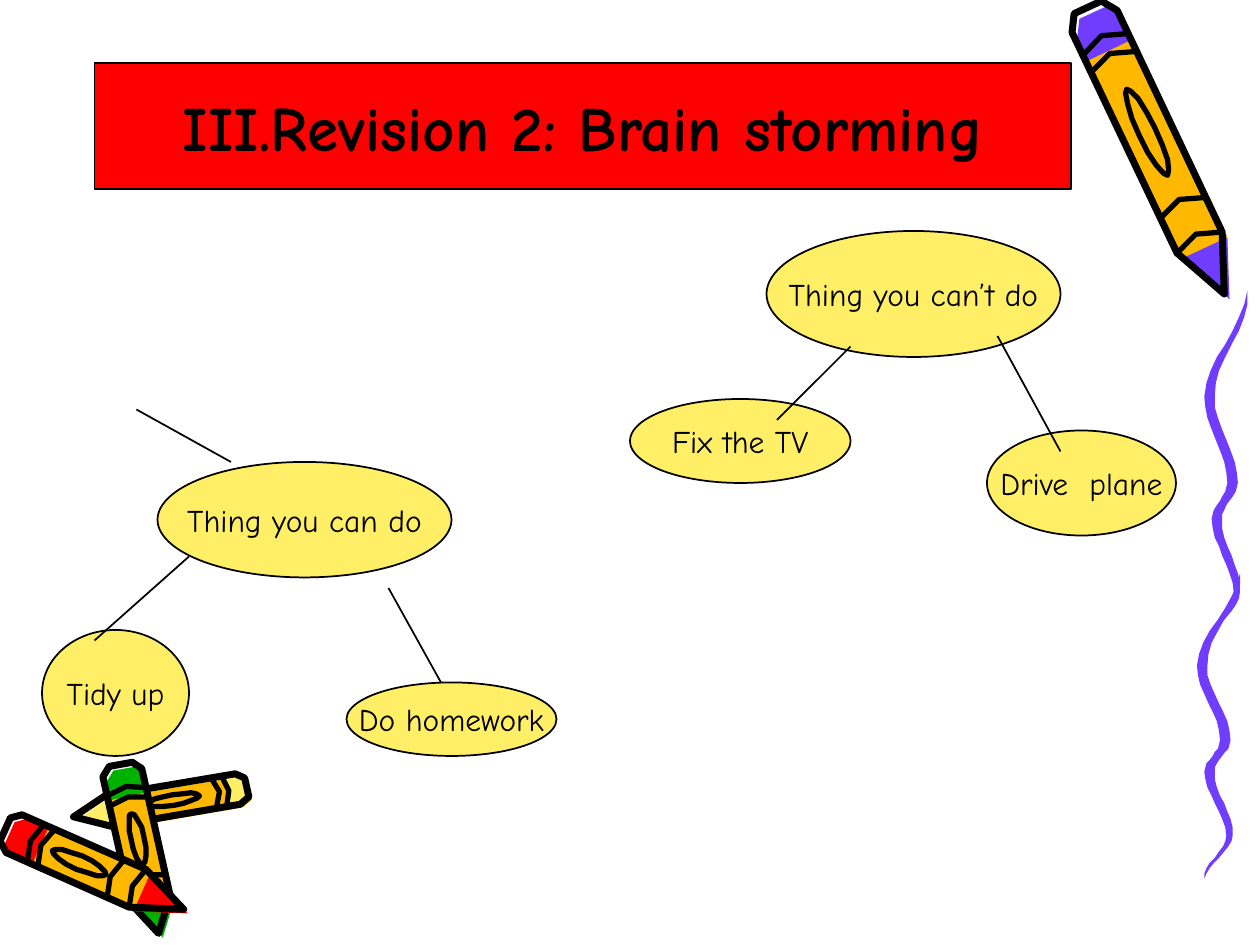
from dataclasses import dataclass
from itertools import pairwise
from math import cos, hypot, pi, sin

from lxml import etree
from pptx import Presentation
from pptx import util as u
from pptx.dml.color import RGBColor
from pptx.enum import shapes, text
from pptx.oxml.ns import qn

PX = 7620  # EMU per px, 120 px to the inch
FONT = "Comic Neue"
COLORS = {
    "black": "000000", "white": "F8F8F8", "red": "FF0000", "green": "00B200",
    "purple": "703DFF", "orange": "FFB800", "yellow": "FFEF66",
}

# Each mind map: a hub bubble, its leaf bubbles (left, top, width, height) and links (from, to)
MIND_MAPS = [
    {
        "hub": ("Thing you can do", 150, 440, 280, 110),
        "leaves": [("Tidy up", 40, 600, 140, 120), ("Do homework", 330, 650, 200, 70)],
        "links": [(220, 440, 130, 390), (180, 530, 90, 610), (370, 560, 420, 650)],
    },
    {
        "hub": ("Thing you can’t do", 730, 220, 280, 120),
        "leaves": [("Fix the TV", 600, 380, 210, 80), ("Drive  plane", 940, 410, 180, 100)],
        "links": [(810, 330, 740, 400), (950, 320, 1010, 430)],
    },
]


@dataclass
class Crayon:
    """A crayon from its blunt end to its tip; parts are placed as shares of length and width."""
    color: str
    end: tuple
    tip: tuple
    width: int
    shoulder: float  # where the cone starts
    cap: float = 0.13  # where the coloured blunt end stops

    def place(self, points, shift=0):
        """Turn (along, across) shares into px, moved right and down by shift."""
        dx, dy = self.tip[0] - self.end[0], self.tip[1] - self.end[1]
        side = self.width / hypot(dx, dy)
        return [(round(self.end[0] + along * dx - across * side * dy + shift),
                 round(self.end[1] + along * dy + across * side * dx + shift))
                for along, across in points]

    def silhouette(self):
        return [(0.05, -0.5), (0, -0.3), (0, 0.3), (0.05, 0.5),
                (self.shoulder, 0.5), (1, 0), (self.shoulder, -0.5)]

    def sleeve(self):
        return [(self.cap, -0.5), (self.cap, 0.5), (self.shoulder, 0.5), (self.shoulder, -0.5)]

    def bands(self):
        """Bent rings beside the cap and the cone."""
        rings = (self.cap, self.cap + 0.06, self.shoulder - 0.12, self.shoulder)
        return [[(ring, -0.5), (ring - 0.03, 0), (ring, 0.5)] for ring in rings]

    def label(self):
        """The oval mark in the middle of the sleeve."""
        middle = (self.cap + self.shoulder) / 2 - 0.04
        turns = [2 * pi * step / 16 for step in range(16)]
        return [(middle + 0.15 * cos(turn), 0.17 * sin(turn)) for turn in turns]


BIG_CRAYON = Crayon("purple", end=(1036, 7), tip=(1166, 280), width=48, shoulder=0.82)
SMALL_CRAYONS = [
    Crayon("yellow", end=(235, 750), tip=(70, 778), width=30, shoulder=0.8),
    Crayon("green", end=(115, 728), tip=(151, 889), width=38, shoulder=0.8, cap=0.16),
    Crayon("red", end=(5, 790), tip=(175, 866), width=39, shoulder=0.74, cap=0.17),
]

# The squiggle swings between these turning points
SQUIGGLE_BENDS = [(1188, 277), (1152, 378), (1174, 460), (1159, 494), (1178, 564), (1154, 612)]
SQUIGGLE_WIDTH = 10


def ribbon(bends, width, steps=8):
    """Outline a band that eases from bend to bend and thins out at both ends."""
    top, bottom = bends[0][1], bends[-1][1]
    left, right = [], []
    for (x0, y0), (x1, y1) in pairwise(bends):
        for step in range(steps + 1):
            share = step / steps
            x = x0 + (x1 - x0) * (1 - cos(pi * share)) / 2
            y = y0 + (y1 - y0) * share
            half = width / 2 * max(0, sin(pi * (y - top) / (bottom - top))) ** 0.5
            left.append((round(x - half), round(y)))
            right.append((round(x + half), round(y)))
    return left + right[::-1]


def write(frame, words, *, size=18, bold=False, color="black"):
    """Put one centred line of formatted text in a text frame."""
    frame.word_wrap = False
    frame.vertical_anchor = text.MSO_ANCHOR.MIDDLE
    line = frame.paragraphs[0]
    line.alignment = text.PP_ALIGN.CENTER
    run = line.add_run()
    run.text = words
    run.font.name, run.font.size, run.font.bold = FONT, u.Pt(size), bold
    run.font.color.rgb = RGBColor.from_string(COLORS[color])


class Board:
    """The current slide and its drawing style."""

    def __init__(self, slide):
        self.shapes = slide.shapes

    def ink(self, line, width):
        line.color.rgb = RGBColor.from_string(COLORS["black"])
        line.width = u.Pt(width)

    def paint(self, shape, color):
        shape.shadow.inherit = False
        shape.fill.solid()
        shape.fill.fore_color.rgb = RGBColor.from_string(COLORS[color])

    def freeform(self, points, closed=True):
        builder = self.shapes.build_freeform(*points[0], scale=PX)
        builder.add_line_segments(points[1:], close=closed)
        return builder.convert_to_shape()

    def patch(self, color, points):
        shape = self.freeform(points)
        self.paint(shape, color)
        shape.line.fill.background()

    def stroke(self, points, width, closed=True):
        shape = self.freeform(points, closed)
        shape.shadow.inherit = False
        shape.fill.background()
        self.ink(shape.line, width)

    def crayon(self, crayon):
        shift = round(crayon.width * 0.1)  # colour sits off its ink, leaving a white edge
        self.patch("white", crayon.place(crayon.silhouette()))
        self.patch(crayon.color, crayon.place(crayon.silhouette(), shift))
        self.patch("orange", crayon.place(crayon.sleeve(), shift))
        self.stroke(crayon.place(crayon.silhouette()), 4)
        self.stroke(crayon.place(crayon.label()), 3)
        for band in crayon.bands():
            self.stroke(crayon.place(band), 3, closed=False)

    def box(self, kind, place, color, words, **style):
        shape = self.shapes.add_shape(kind, *(n * PX for n in place))
        self.paint(shape, color)
        self.ink(shape.line, 1)
        write(shape.text_frame, words, **style)

    def bubble(self, words, *place):
        self.box(shapes.MSO_SHAPE.OVAL, place, "yellow", words)

    def banner(self, words, *place):
        self.box(shapes.MSO_SHAPE.RECTANGLE, place, "red", words, size=36, bold=True)

    def link(self, *ends):
        line = self.shapes.add_connector(shapes.MSO_CONNECTOR.STRAIGHT, *(n * PX for n in ends))
        self.ink(line.line, 1)
        etree.SubElement(line._element.spPr, qn("a:effectLst"))


def main():
    deck = Presentation()
    deck.slide_width, deck.slide_height = 1200 * PX, 900 * PX
    board = Board(deck.slides.add_slide(deck.slide_layouts[6]))

    # Crayons
    for crayon in [BIG_CRAYON, *SMALL_CRAYONS]:
        board.crayon(crayon)

    # Squiggle: the lower half repeats the upper one, slightly flattened
    start = SQUIGGLE_BENDS[0][1]
    lower_bends = [(x - 7, 546 + (y - start) * 0.87) for x, y in SQUIGGLE_BENDS]
    for bends in (lower_bends, SQUIGGLE_BENDS):
        board.patch("purple", ribbon(bends, SQUIGGLE_WIDTH))

    # Mind maps, links on top of the bubbles
    for mind_map in MIND_MAPS:
        for bubble in [mind_map["hub"], *mind_map["leaves"]]:
            board.bubble(*bubble)
        for ends in mind_map["links"]:
            board.link(*ends)

    # Title
    board.banner("III.Revision 2: Brain storming", 90, 60, 930, 120)

    deck.save("out.pptx")


if __name__ == "__main__":
    main()
